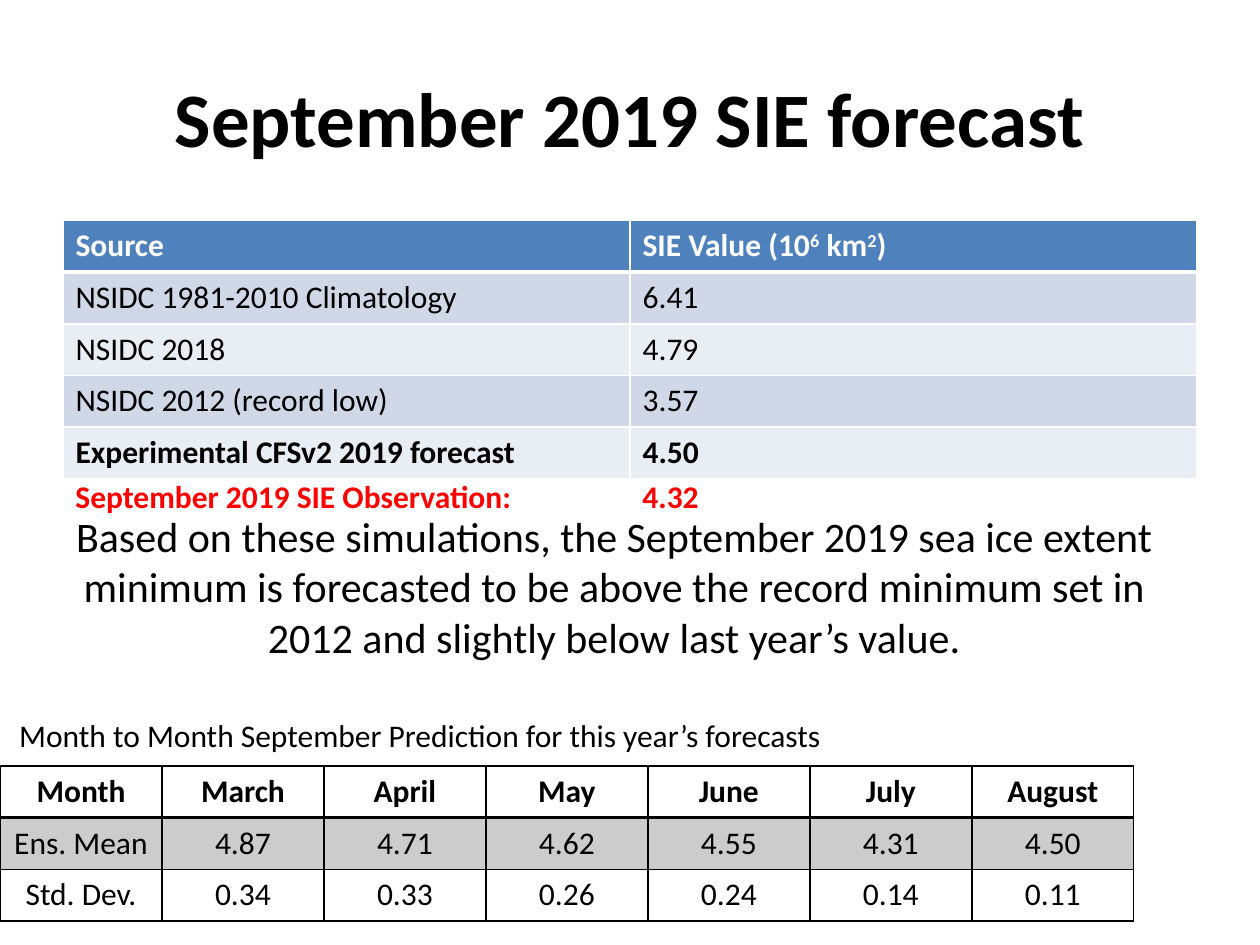
from lxml import etree
from pptx import Presentation
from pptx import util as u
from pptx.dml.color import RGBColor
from pptx.enum import text
from pptx.oxml.ns import qn

COLOURS = {
    "black": "000000",
    "white": "FFFFFF",
    "red": "FF0000",
    "header": "4F81BD",
    "band": "D0D8E8",
    "light": "E9EDF4",
}
CENTER = text.PP_ALIGN.CENTER
LEFT = text.PP_ALIGN.LEFT


class SlideBuilder:
    font_name = "Calibri"

    def __init__(self, presentation):
        self.slide = presentation.slides.add_slide(presentation.slide_layouts[5])

    def add_text(self, frame, content, size=18, colour="black", bold=False, align=LEFT):
        paragraph = frame.paragraphs[0]
        paragraph.alignment = align
        pieces = [(content, False)] if isinstance(content, str) else content
        font_format = {"name": self.font_name, "size": u.Pt(size), "bold": bold}
        for piece, raised in pieces:
            run = paragraph.add_run()
            run.text = piece
            for name, value in font_format.items():
                setattr(run.font, name, value)
            run.font.color.rgb = RGBColor.from_string(COLOURS[colour])
            if raised:
                run._r.get_or_add_rPr().set("baseline", "30000")
        return paragraph

    def title(self, content, left, top, width, height):
        shape = self.slide.shapes.title
        box = {"left": left, "top": top, "width": width, "height": height}
        for name, value in box.items():
            setattr(shape, name, u.Inches(value))
        shape.text_frame.vertical_anchor = text.MSO_ANCHOR.MIDDLE
        self.add_text(shape.text_frame, content, 44, bold=True, align=CENTER)

    def text_box(self, content, left, top, width, height, wrap=True, tab=None, **style):
        box = [u.Inches(value) for value in (left, top, width, height)]
        frame = self.slide.shapes.add_textbox(*box).text_frame
        frame.word_wrap = wrap
        frame.auto_size = text.MSO_AUTO_SIZE.SHAPE_TO_FIT_TEXT
        paragraph = self.add_text(frame, content, **style)
        if tab:
            tabs = etree.SubElement(paragraph._p.get_or_add_pPr(), qn("a:tabLst"))
            etree.SubElement(tabs, qn("a:tab"), pos=str(u.Inches(tab)), algn="l")

    def borders(self, cell, colour, widths):
        properties = cell._tc.get_or_add_tcPr()
        for side, width in widths.items():
            line = etree.SubElement(properties, qn(f"a:ln{side}"), w=str(u.Pt(width)))
            fill = etree.SubElement(line, qn("a:solidFill"))
            etree.SubElement(fill, qn("a:srgbClr"), val=COLOURS[colour])

    def fill(self, cell, colour, opacity=100):
        if colour is None:
            cell.fill.background()
            return
        cell.fill.solid()
        cell.fill.fore_color.rgb = RGBColor.from_string(COLOURS[colour])
        if opacity < 100:
            shade = cell._tc.tcPr.find(qn("a:solidFill")).find(qn("a:srgbClr"))
            etree.SubElement(shade, qn("a:alpha"), val=str(opacity * 1000))

    def table(self, rows, left, top, width, fills, bold_rows, border, rule,
              header_colour="black", align=LEFT, opacity=100):
        row_height = u.Inches(0.41)
        table = self.slide.shapes.add_table(
            len(rows), len(rows[0]), u.Inches(left), u.Inches(top),
            u.Inches(width), row_height * len(rows)).table
        table.first_row = table.horz_banding = False
        for row_index, values in enumerate(rows):
            table.rows[row_index].height = row_height
            widths = {
                "L": 1,
                "R": 1,
                "T": rule if row_index == 1 else 1,
                "B": rule if row_index == 0 else 1,
            }
            for column_index, value in enumerate(values):
                cell = table.cell(row_index, column_index)
                self.borders(cell, border, widths)
                self.fill(cell, fills[row_index], opacity)
                self.add_text(cell.text_frame, value,
                              colour=header_colour if row_index == 0 else "black",
                              bold=row_index in bold_rows, align=align)


def main():
    presentation = Presentation()
    presentation.slide_width = u.Inches(10)
    presentation.slide_height = u.Inches(7.5)
    builder = SlideBuilder(presentation)

    builder.title("September 2019 SIE forecast", 0.5, 0.3, 9, 1.25)

    unit = [("SIE Value (10", False), ("6", True), (" km", False), ("2", True), (")", False)]
    sources = [
        ("Source", unit),
        ("NSIDC 1981-2010 Climatology", "6.41"),
        ("NSIDC 2018", "4.79"),
        ("NSIDC 2012 (record low)", "3.57"),
        ("Experimental CFSv2 2019 forecast", "4.50"),
    ]
    builder.table(sources, 0.5, 1.75, 9, ["header", "band", "light", "band", "light"],
                  bold_rows=(0, 4), border="white", rule=3, header_colour="white")

    builder.text_box(
        "Based on these simulations, the September 2019 sea ice extent minimum is "
        "forecasted to be above the record minimum set in 2012 and slightly below "
        "last year’s value.", 0.5, 4, 8.75, 1.31, size=24, align=CENTER)

    months = [
        ("Month", "March", "April", "May", "June", "July", "August"),
        ("Ens. Mean", "4.87", "4.71", "4.62", "4.55", "4.31", "4.50"),
        ("Std. Dev.", "0.34", "0.33", "0.26", "0.24", "0.14", "0.11"),
    ]
    builder.table(months, 0, 6.08, 9, [None, "black", None], bold_rows=(0,),
                  border="black", rule=2, align=CENTER, opacity=20)

    builder.text_box("Month to Month September Prediction for this year’s forecasts",
                     0, 5.63, 6.67, 0.4, align=CENTER)
    builder.text_box("September 2019 SIE Observation:\t4.32", 0.5, 3.74, 5.21, 0.4,
                     wrap=False, tab=4.5, colour="red", bold=True)

    presentation.save("out.pptx")


if __name__ == "__main__":
    main()
